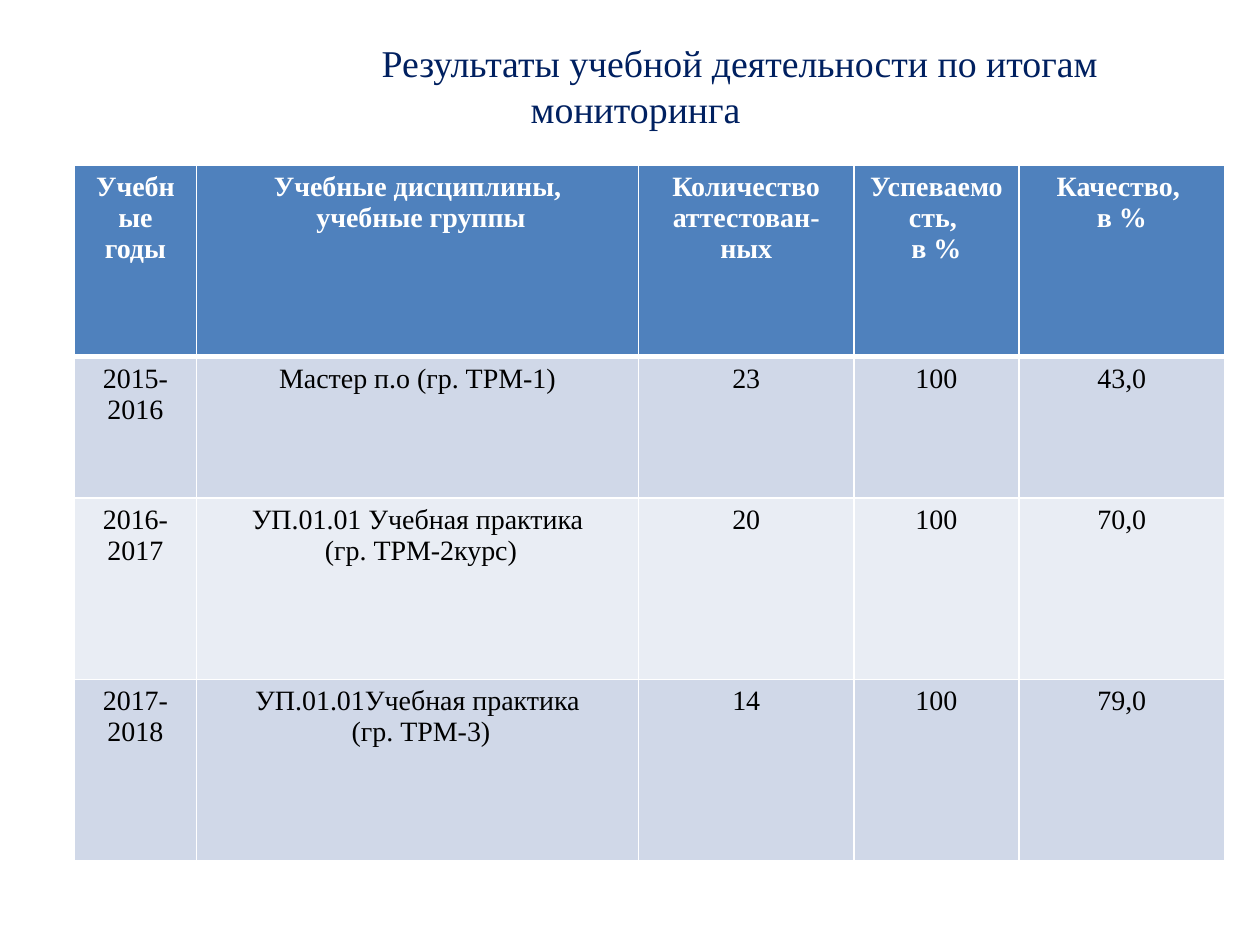
from dataclasses import dataclass

from lxml.etree import SubElement
from pptx import Presentation
from pptx.dml.color import RGBColor
from pptx.enum.text import MSO_ANCHOR, MSO_AUTO_SIZE, PP_ALIGN
from pptx.oxml.ns import qn
from pptx.util import Pt


@dataclass(frozen=True)
class Theme:
    font: str = "Times New Roman"
    title_size: float = 21.6
    cell_size: float = 16
    title: str = "002060"
    header: str = "4F81BD"
    header_text: str = "FFFFFF"
    text: str = "000000"
    bands: tuple = ("D0D8E8", "E9EDF4")
    border: str = "FFFFFF"
    thin: float = 1
    thick: float = 3


THEME = Theme()
COLUMN_WIDTHS = (69.8, 252.6, 123.1, 94.3, 117.6)
ROW_HEIGHTS = (109.4, 80.6, 103.7, 103.7)
ROWS = (
    ("Учебные годы", "Учебные дисциплины,\n учебные группы",
     "Количество аттестован-ных", "Успеваемость, \nв %", "Качество, \nв %"),
    ("2015-2016", "Мастер п.о (гр. ТРМ-1)", "23", "100", "43,0"),
    ("2016-2017", "УП.01.01 Учебная практика\n (гр. ТРМ-2курс)", "20", "100", "70,0"),
    ("2017-2018", "УП.01.01Учебная практика\n (гр. ТРМ-3)", "14", "100", "79,0"),
)


def write_text(tf, text, *, size, color, bold=False, align=PP_ALIGN.CENTER):
    tf.word_wrap = True
    for i, line in enumerate(text.split("\n")):
        p = tf.paragraphs[0] if i == 0 else tf.add_paragraph()
        p.alignment = align
        r = p.add_run()
        r.text = line
        r.font.name = THEME.font
        r.font.size = Pt(size)
        r.font.bold = bold
        r.font.color.rgb = RGBColor.from_string(color)


def set_borders(cell, **widths):
    tcPr = cell._tc.get_or_add_tcPr()
    for side in "LRTB":
        width = Pt(widths.get(side, THEME.thin))
        ln = SubElement(tcPr, qn(f"a:ln{side}"), w=str(width))
        fill = SubElement(ln, qn("a:solidFill"))
        SubElement(fill, qn("a:srgbClr"), val=THEME.border)


def add_title(s, left, top, width, height):
    sp = s.shapes.title
    sp.left, sp.top, sp.width, sp.height = map(Pt, (left, top, width, height))
    tf = sp.text_frame
    tf.auto_size = MSO_AUTO_SIZE.NONE
    tf.vertical_anchor = MSO_ANCHOR.MIDDLE
    tf.margin_bottom = Pt(20)
    write_text(tf, "Результаты учебной деятельности по итогам мониторинга",
               size=THEME.title_size, color=THEME.title)
    tf.paragraphs[0]._p.get_or_add_pPr().set("indent", str(Pt(119)))


def add_results(s, left, top, width, height):
    table = s.shapes.add_table(len(ROWS), len(COLUMN_WIDTHS),
                               Pt(left), Pt(top), Pt(width), Pt(height)).table
    for column, share in zip(table.columns, COLUMN_WIDTHS):
        column.width = Pt(width * share / sum(COLUMN_WIDTHS))
    for row, share in zip(table.rows, ROW_HEIGHTS):
        row.height = Pt(height * share / sum(ROW_HEIGHTS))
    for i, texts in enumerate(ROWS):
        header = i == 0
        color = THEME.header_text if header else THEME.text
        fill = THEME.header if header else THEME.bands[(i - 1) % 2]
        edges = {0: {"B": THEME.thick}, 1: {"T": THEME.thick}}.get(i, {})
        for j, text in enumerate(texts):
            cell = table.cell(i, j)
            set_borders(cell, **edges)
            cell.fill.solid()
            cell.fill.fore_color.rgb = RGBColor.from_string(fill)
            write_text(cell.text_frame, text, size=THEME.cell_size,
                       color=color, bold=header)


def main():
    prs = Presentation()
    prs.slide_width, prs.slide_height = Pt(720), Pt(540)
    s = prs.slides.add_slide(prs.slide_layouts[5])
    add_title(s, 42.5, 21.6, 641.5, 70.6)
    add_results(s, 42.5, 94.5, 657.4, 397.4)
    prs.save("out.pptx")


if __name__ == "__main__":
    main()
